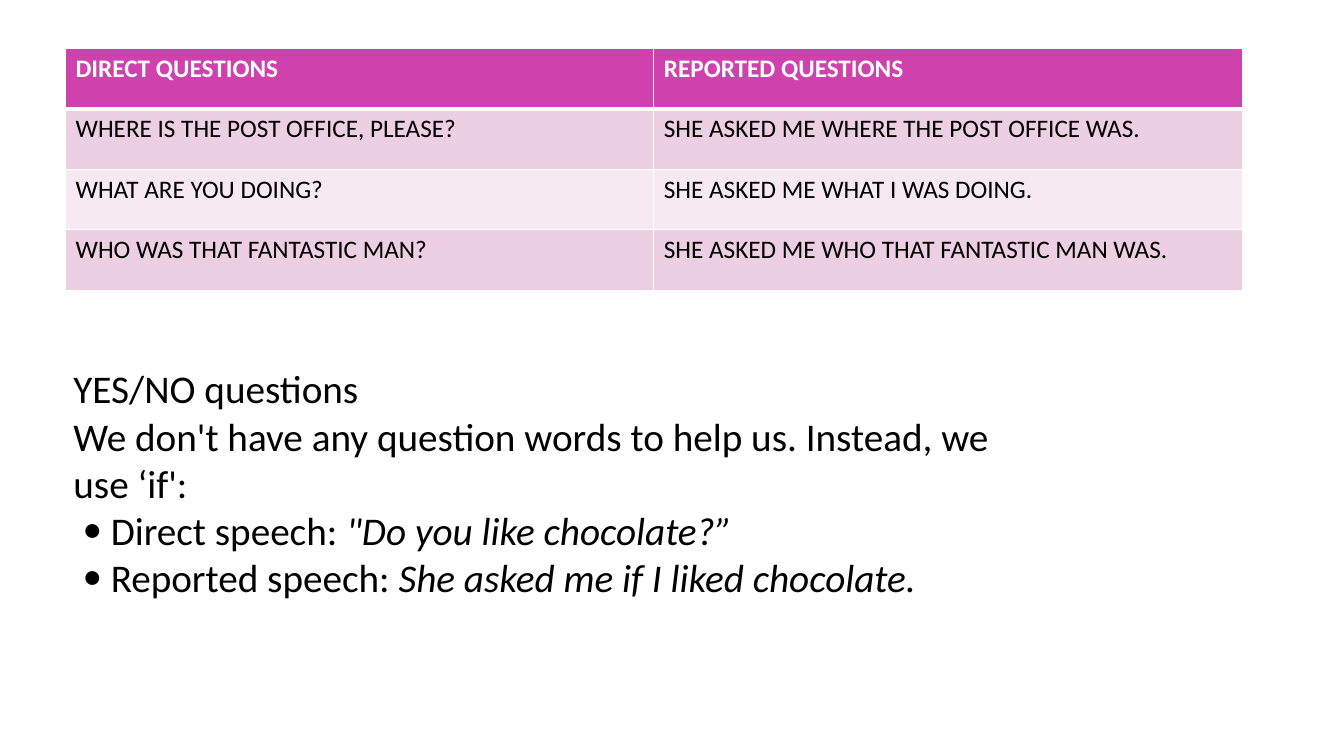
from dataclasses import dataclass

from pptx import Presentation
from pptx.dml.color import RGBColor
from pptx.enum.text import MSO_AUTO_SIZE
from pptx.oxml.ns import qn
from pptx.util import Inches, Pt
from lxml.etree import SubElement


@dataclass(frozen=True)
class Theme:
    font: str = "Calibri"
    table_size: int = 18
    body_size: int = 28
    white: str = "FFFFFF"
    black: str = "000000"
    header: str = "CF41AD"
    bands: tuple[str, str] = ("EDCFE3", "F6E9F1")


@dataclass(frozen=True)
class Line:
    text: str
    quote: str = ""
    bullet: bool = False


THEME = Theme()

QUESTIONS = [
    ("DIRECT QUESTIONS", "REPORTED QUESTIONS"),
    ("WHERE IS THE POST OFFICE, PLEASE?", "SHE ASKED ME WHERE THE POST OFFICE WAS."),
    ("WHAT ARE YOU DOING?", "SHE ASKED ME WHAT I WAS DOING."),
    ("WHO WAS THAT FANTASTIC MAN?", "SHE ASKED ME WHO THAT FANTASTIC MAN WAS."),
]

RULES = [
    Line("YES/NO questions"),
    Line("We don't have any question words to help us. Instead, we use ‘if':"),
    Line("Direct speech: ", "\"Do you like chocolate?”", bullet=True),
    Line("Reported speech: ", "She asked me if I liked chocolate.", bullet=True),
]


def add_text(p, text: str, *, size: int, color: str = THEME.black,
             bold: bool = False, italic: bool = False) -> None:
    r = p.add_run()
    r.text = text
    r.font.name = THEME.font
    r.font.size = Pt(size)
    r.font.bold = bold
    r.font.italic = italic
    r.font.color.rgb = RGBColor.from_string(color)


def set_bullet(p) -> None:
    """Give the paragraph a round bullet with a hanging indent."""
    pPr = p._p.get_or_add_pPr()
    pPr.set("marL", str(Inches(0.37)))
    pPr.set("indent", str(-Inches(0.28)))
    SubElement(pPr, qn("a:buFont"), typeface=THEME.font)
    SubElement(pPr, qn("a:buChar"), char="•")


def set_borders(cell, **widths: float) -> None:
    """Draw white edges; keys are L, R, T and B, widths are in points."""
    tcPr = cell._tc.get_or_add_tcPr()
    for side, width in widths.items():
        ln = SubElement(tcPr, qn(f"a:ln{side}"), w=str(Pt(width)))
        fill = SubElement(ln, qn("a:solidFill"))
        SubElement(fill, qn("a:srgbClr"), val=THEME.white)


def add_question_table(slide) -> None:
    frame = slide.shapes.add_table(len(QUESTIONS), 2, Inches(0.65), Inches(0.48),
                                   Inches(11.67), Inches(2.4))
    for i, row in enumerate(QUESTIONS):
        is_header = i == 0
        for j, text in enumerate(row):
            cell = frame.table.cell(i, j)
            set_borders(cell, L=1, R=1, T=3 if i == 1 else 1, B=3 if is_header else 1)
            cell.fill.solid()
            color = THEME.header if is_header else THEME.bands[(i - 1) % 2]
            cell.fill.fore_color.rgb = RGBColor.from_string(color)
            add_text(cell.text_frame.paragraphs[0], text, size=THEME.table_size,
                     color=THEME.white if is_header else THEME.black, bold=is_header)


def add_rules(slide) -> None:
    sp = slide.shapes.add_textbox(Inches(0.63), Inches(3.57), Inches(9.35), Inches(2.46))
    tf = sp.text_frame
    tf.word_wrap = True
    tf.auto_size = MSO_AUTO_SIZE.SHAPE_TO_FIT_TEXT
    for i, line in enumerate(RULES):
        p = tf.add_paragraph() if i else tf.paragraphs[0]
        if line.bullet:
            set_bullet(p)
        add_text(p, line.text, size=THEME.body_size)
        if line.quote:
            add_text(p, line.quote, size=THEME.body_size, italic=True)


def main() -> None:
    prs = Presentation()
    prs.slide_width, prs.slide_height = Inches(13.33), Inches(7.5)
    slide = prs.slides.add_slide(prs.slide_layouts[6])
    add_question_table(slide)
    add_rules(slide)
    prs.save("out.pptx")


if __name__ == "__main__":
    main()
